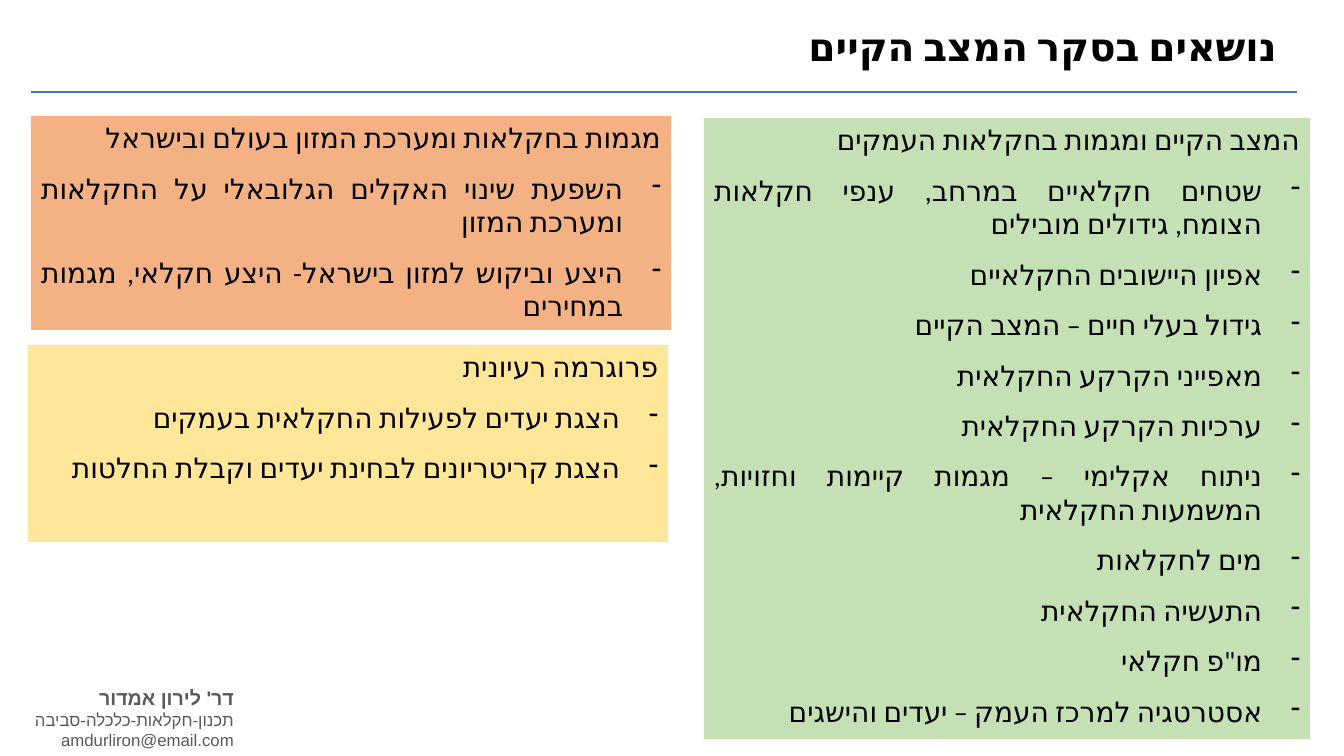
from dataclasses import dataclass
from typing import Any

import pptx
import pptx.dml.color
import pptx.enum.lang
import pptx.enum.shapes
import pptx.enum.text
import pptx.oxml.ns
import pptx.util
from lxml import etree

ALIGN = pptx.enum.text.PP_ALIGN
EMU_PER_PX = 914400 / 100.8


@dataclass(frozen=True)
class Theme:
    heading_font: str = "Calibri"
    contact_font: str = "Arial"
    text: str = "000000"
    contact: str = "595959"
    rule: str = "4472C4"
    green: str = "C5E0B4"
    orange: str = "F4B183"
    yellow: str = "FFE699"
    title_size: int = 28
    body_size: int = 20
    name_size: int = 14
    contact_size: int = 12


THEME = Theme()


@dataclass(frozen=True)
class Box:
    left: int
    top: int
    width: int
    height: int


@dataclass(frozen=True)
class Line:
    text: str
    size: int
    font: str
    color: str
    bold: bool = False
    align: Any = ALIGN.RIGHT
    space_after: int = 0
    bullet: bool = False


@dataclass(frozen=True)
class Panel:
    box: Box
    fill: str
    heading: str
    topics: tuple[str, ...]


PANELS = (
    Panel(Box(704, 118, 606, 621), THEME.green, "המצב הקיים ומגמות בחקלאות העמקים", (
        "שטחים חקלאיים במרחב, ענפי חקלאות הצומח, גידולים מובילים",
        "אפיון היישובים החקלאיים",
        "גידול בעלי חיים – המצב הקיים",
        "מאפייני הקרקע החקלאית",
        "ערכיות הקרקע החקלאית",
        "ניתוח אקלימי – מגמות קיימות וחזויות, המשמעות החקלאית",
        "מים לחקלאות",
        "התעשיה החקלאית",
        'מו"פ חקלאי',
        "אסטרטגיה למרכז העמק – יעדים והישגים",
    )),
    Panel(Box(31, 116, 640, 214), THEME.orange, "מגמות בחקלאות ומערכת המזון בעולם ובישראל", (
        "השפעת שינוי האקלים הגלובאלי על החקלאות ומערכת המזון",
        "היצע וביקוש למזון בישראל- היצע חקלאי, מגמות במחירים",
    )),
    Panel(Box(28, 345, 640, 197), THEME.yellow, "פרוגרמה רעיונית", (
        "הצגת יעדים לפעילות החקלאית בעמקים",
        "הצגת קריטריונים לבחינת יעדים וקבלת החלטות",
    )),
)

TITLE = Line("נושאים בסקר המצב הקיים", THEME.title_size, THEME.heading_font, THEME.text, True)
CONTACT = (
    Line("דר' לירון אמדור", THEME.name_size, THEME.contact_font, THEME.contact, True),
    Line("תכנון-חקלאות-כלכלה-סביבה", THEME.contact_size, THEME.contact_font, THEME.contact),
    Line("amdurliron@email.com", THEME.contact_size, THEME.contact_font, THEME.contact),
)


def px(length: int) -> pptx.util.Emu:
    return pptx.util.Emu(round(length * EMU_PER_PX))


def rgb(color: str) -> pptx.dml.color.RGBColor:
    return pptx.dml.color.RGBColor.from_string(color)


def place(box: Box) -> tuple[pptx.util.Emu, ...]:
    return px(box.left), px(box.top), px(box.width), px(box.height)


def apply(target: Any, values: dict[str, Any]) -> None:
    for name, value in values.items():
        setattr(target, name, value)


def add_element(parent: Any, tag: str, **attributes: str) -> None:
    etree.SubElement(parent, pptx.oxml.ns.qn(tag), attributes)


def write_lines(shape: Any, lines: tuple[Line, ...]) -> None:
    frame = shape.text_frame
    apply(frame, {
        "word_wrap": True,
        "auto_size": pptx.enum.text.MSO_AUTO_SIZE.NONE,
        "vertical_anchor": pptx.enum.text.MSO_ANCHOR.TOP,
    })
    for index, line in enumerate(lines):
        paragraph = frame.add_paragraph() if index else frame.paragraphs[0]
        apply(paragraph, {"alignment": line.align, "space_after": pptx.util.Pt(line.space_after)})
        properties = paragraph._p.get_or_add_pPr()
        properties.set("rtl", "1")
        if line.bullet:
            indent = px(38)
            properties.set("marL", str(indent))
            properties.set("indent", str(-indent))
            add_element(properties, "a:buFontTx")
            add_element(properties, "a:buChar", char="-")
        run = paragraph.add_run()
        run.text = line.text
        apply(run.font, {
            "size": pptx.util.Pt(line.size),
            "name": line.font,
            "bold": line.bold,
            "language_id": pptx.enum.lang.MSO_LANGUAGE_ID.HEBREW,
        })
        run.font.color.rgb = rgb(line.color)
        add_element(run._r.get_or_add_rPr(), "a:cs", typeface=line.font)


def add_text(slide: Any, box: Box, lines: tuple[Line, ...]) -> None:
    write_lines(slide.shapes.add_textbox(*place(box)), lines)


def add_rule(slide: Any, left: int, right: int, top: int) -> None:
    connector = slide.shapes.add_connector(
        pptx.enum.shapes.MSO_CONNECTOR.STRAIGHT, px(left), px(top), px(right), px(top))
    connector.line.color.rgb = rgb(THEME.rule)
    connector.line.width = pptx.util.Pt(1.5)
    add_element(connector._element.spPr, "a:effectLst")


def add_panel(slide: Any, panel: Panel) -> None:
    shape = slide.shapes.add_shape(pptx.enum.shapes.MSO_SHAPE.RECTANGLE, *place(panel.box))
    shape.shadow.inherit = False
    shape.fill.solid()
    shape.fill.fore_color.rgb = rgb(panel.fill)
    shape.line.fill.background()
    write_lines(shape, tuple(
        Line(text, THEME.body_size, THEME.heading_font, THEME.text,
             align=ALIGN.JUSTIFY, space_after=12, bullet=index > 0)
        for index, text in enumerate((panel.heading, *panel.topics))))


def main() -> None:
    """Build the slide listing the topics of the existing-situation survey."""
    presentation = pptx.Presentation()
    apply(presentation, {"slide_width": px(1344), "slide_height": px(756)})
    slide = presentation.slides.add_slide(presentation.slide_layouts[6])
    add_text(slide, Box(13, 681, 231, 75), CONTACT)
    add_rule(slide, 31, 1297, 92)
    add_text(slide, Box(758, 17, 529, 57), (TITLE,))
    for panel in PANELS:
        add_panel(slide, panel)
    presentation.save("out.pptx")


if __name__ == "__main__":
    main()
